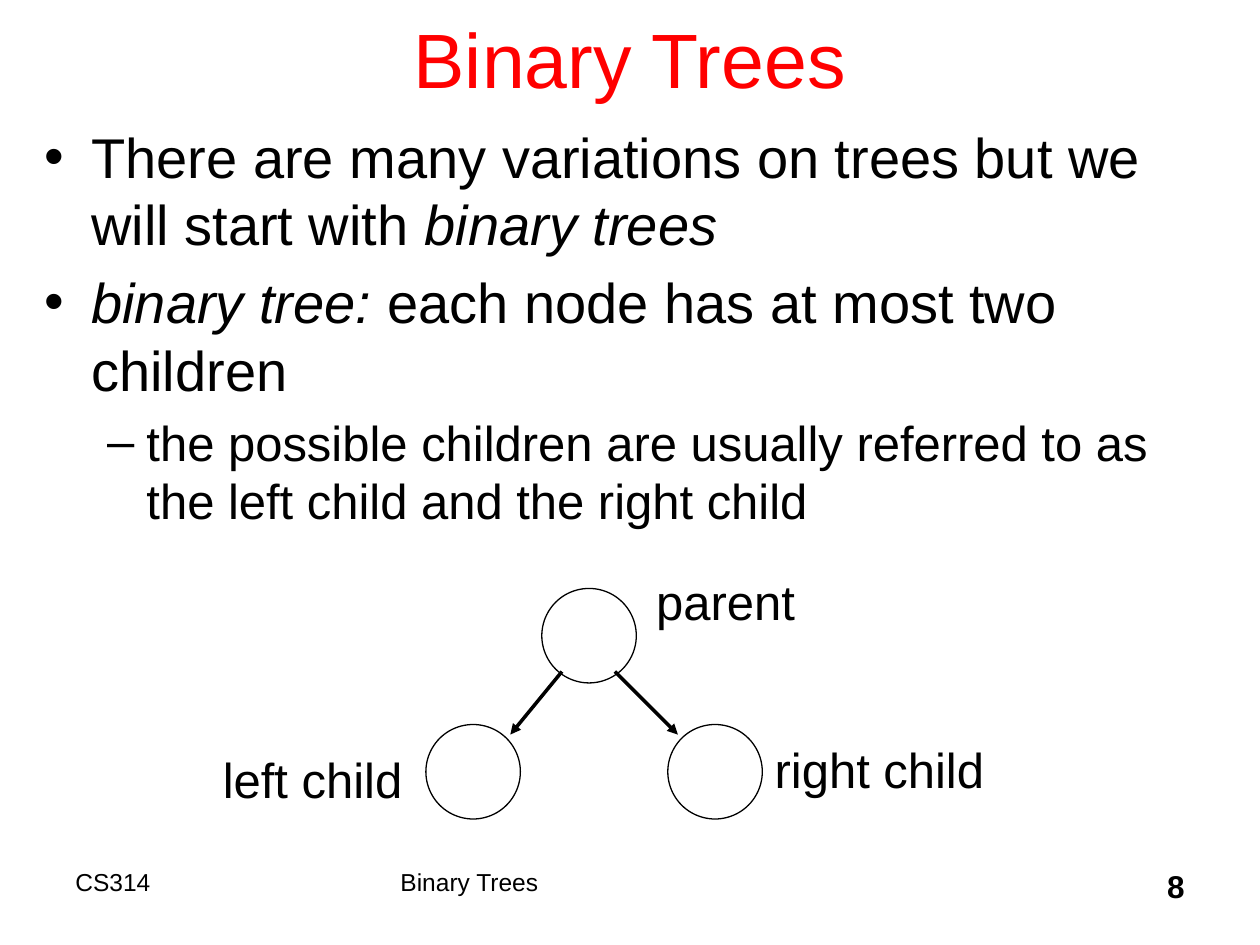
from lxml import etree
from pptx import Presentation
from pptx.dml.color import RGBColor
from pptx.enum.shapes import MSO_CONNECTOR, MSO_SHAPE
from pptx.enum.text import MSO_ANCHOR, MSO_AUTO_SIZE, PP_ALIGN
from pptx.oxml.ns import qn
from pptx.util import Inches, Pt

BLACK = RGBColor(0, 0, 0)
RED = RGBColor(255, 0, 0)
FONT = "Arial"
STRAIGHT = MSO_CONNECTOR.STRAIGHT
OVAL = MSO_SHAPE.OVAL
MIDDLE = MSO_ANCHOR.MIDDLE
NO_FIT = MSO_AUTO_SIZE.NONE
FIT_SHAPE = MSO_AUTO_SIZE.SHAPE_TO_FIT_TEXT
LEFT, CENTER, RIGHT = PP_ALIGN.LEFT, PP_ALIGN.CENTER, PP_ALIGN.RIGHT

WIDTH, HEIGHT = 10, 7.5
NODE = 0.075 * WIDTH
FOOTER_TOP, FOOTER_HEIGHT = 6.83, 0.5

NODES = [(4.3, 4.67), (3.38, 5.75), (5.3, 5.75)]
EDGES = [((4.46, 5.33), (4.05, 5.83)), ((4.88, 5.33), (5.38, 5.83))]
LABELS = [
    ("parent", 5.11, 4.49, 1.31),
    ("left child", 1.67, 5.9, 1.63),
    ("right child", 6.05, 5.82, 1.87),
]
FOOTERS = [
    ("CS314", 0.5, 2.5, 14, False, LEFT),
    ("Binary Trees", 3.08, 3.83, 14, False, LEFT),
    ("8", 7.42, 2.08, 18, True, RIGHT),
]
BULLETS = [
    (0, 32, [("There are many variations on trees but we will start with ", False),
             ("binary trees", True)]),
    (0, 32, [("binary tree: ", True),
             ("each node has at most two children", False)]),
    (1, 28, [("the possible children are usually referred to as "
              "the left child and the right child", False)]),
]


def place(sp, left, top, width, height):
    sp.left, sp.top = Inches(left), Inches(top)
    sp.width, sp.height = Inches(width), Inches(height)


def style(r, size, color=BLACK, bold=False, italic=False):
    r.font.name = FONT
    r.font.size = Pt(size)
    r.font.color.rgb = color
    r.font.bold = bold
    r.font.italic = italic


def fill_title(sp, text):
    place(sp, 0.75, -0.17, 8.5, 1.25)
    tf = sp.text_frame
    tf.text = text
    tf.auto_size = NO_FIT
    tf.vertical_anchor = MIDDLE
    p = tf.paragraphs[0]
    p.alignment = CENTER
    style(p.runs[0], 44, RED)


def fill_body(sp):
    place(sp, 0.25, 0.92, 9.5, 6)
    tf = sp.text_frame
    tf.auto_size = NO_FIT
    for i, (level, size, parts) in enumerate(BULLETS):
        p = tf.add_paragraph() if i else tf.paragraphs[0]
        p.level = level
        for text, italic in parts:
            r = p.add_run()
            r.text = text
            style(r, size, italic=italic)


def add_text(slide, text, box, size, bold=False, align=LEFT):
    sp = slide.shapes.add_textbox(*map(Inches, box))
    tf = sp.text_frame
    tf.text = text
    tf.word_wrap = True
    p = tf.paragraphs[0]
    p.alignment = align
    style(p.runs[0], size, bold=bold)
    return tf


def add_label(slide, text, left, top, width):
    tf = add_text(slide, text, (left, top, width, 0.57), 28)
    tf.word_wrap = False
    tf.auto_size = FIT_SHAPE
    tf.paragraphs[0].space_before = Pt(5.6)


def add_node(slide, left, top):
    sp = slide.shapes.add_shape(OVAL, *map(Inches, (left, top, NODE, NODE)))
    sp.shadow.inherit = False
    sp.fill.background()
    sp.line.color.rgb = BLACK
    sp.line.width = Pt(0.75)


def add_arrow(slide, start, end):
    line = slide.shapes.add_connector(STRAIGHT, *map(Inches, start + end))
    line.line.color.rgb = BLACK
    line.line.width = Pt(2)
    ln = line.line._get_or_add_ln()
    etree.SubElement(ln, qn("a:tailEnd"), type="triangle")
    etree.SubElement(line._element.spPr, qn("a:effectLst"))


def main():
    prs = Presentation()
    prs.slide_width, prs.slide_height = Inches(WIDTH), Inches(HEIGHT)
    slide = prs.slides.add_slide(prs.slide_layouts[1])
    fill_title(slide.shapes.title, "Binary Trees")
    fill_body(slide.placeholders[1])
    for node in NODES:
        add_node(slide, *node)
    for edge in EDGES:
        add_arrow(slide, *edge)
    for label in LABELS:
        add_label(slide, *label)
    for text, left, width, size, bold, align in FOOTERS:
        box = (left, FOOTER_TOP, width, FOOTER_HEIGHT)
        add_text(slide, text, box, size, bold, align)
    prs.save("out.pptx")


if __name__ == "__main__":
    main()
